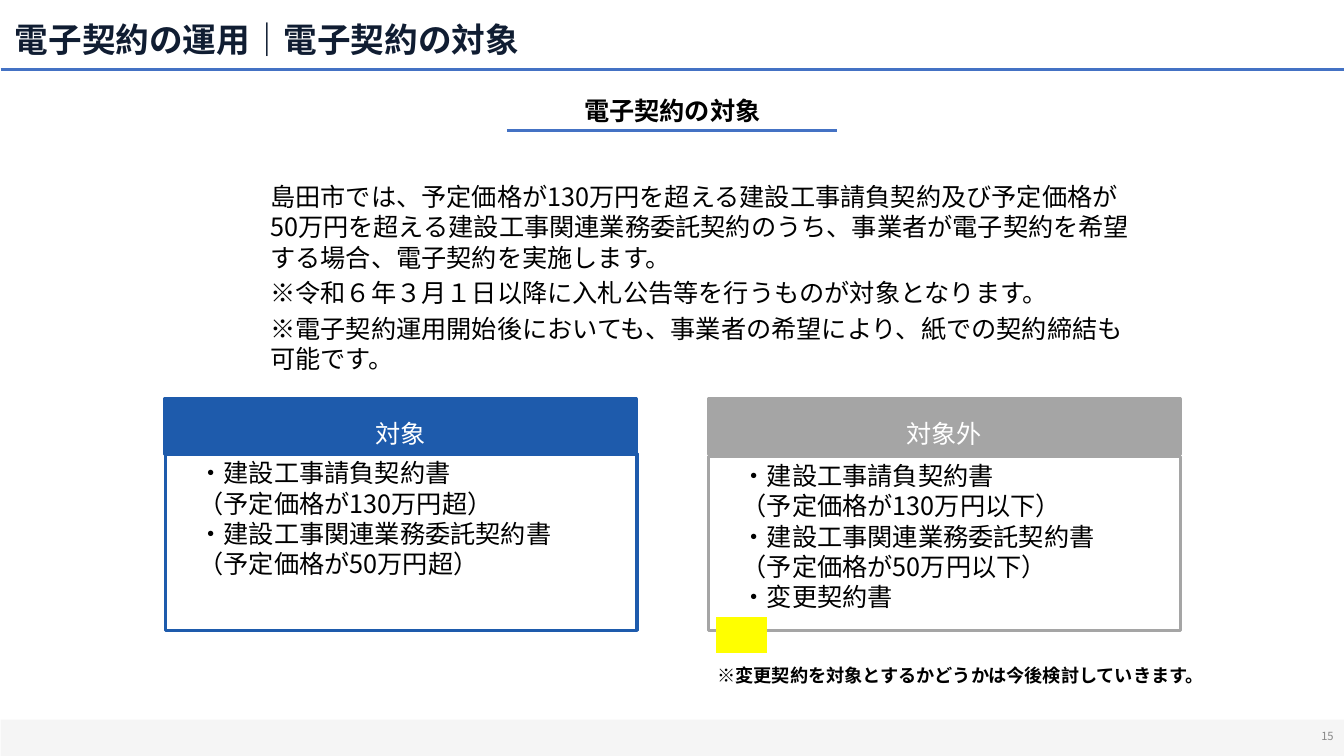
import pptx
import pptx.util
import pptx.dml.color
import pptx.enum.shapes
import pptx.enum.text
import pptx.oxml.ns
import lxml.etree
from dataclasses import dataclass

Pt = pptx.util.Pt
ALIGN = pptx.enum.text.PP_ALIGN
ANCHOR = pptx.enum.text.MSO_ANCHOR
RECTANGLE = pptx.enum.shapes.MSO_SHAPE.RECTANGLE
qn = pptx.oxml.ns.qn

# Content
TITLE = "電子契約の運用｜電子契約の対象"
SUBTITLE = "電子契約の対象"
PAGE_NUMBER = "15"
OVERVIEW = [
    "島田市では、予定価格が130万円を超える建設工事請負契約及び予定価格が50万円を超える"
    "建設工事関連業務委託契約のうち、事業者が電子契約を希望する場合、電子契約を実施します。",
    "※令和６年３月１日以降に入札公告等を行うものが対象となります。",
    "※電子契約運用開始後においても、事業者の希望により、紙での契約締結も可能です。",
]
NOTE = "※変更契約を対象とするかどうかは今後検討していきます。"


@dataclass(frozen=True)
class Theme:
    font: str = "Noto Sans CJK JP"
    title_color: str = "101D32"
    text: str = "000000"
    white: str = "FFFFFF"
    rule: str = "4472C4"
    included: str = "1E5BAC"
    excluded: str = "A5A5A5"
    footer: str = "F5F5F5"
    page: str = "888888"
    highlight: str = "FFFF00"
    title_size: float = 24
    body_size: float = 18
    note_size: float = 13
    page_size: float = 8
    line_width: float = 2.25


THEME = Theme()

# Heading, colour, header left, panel left, panel top, lines
CARDS = [
    ("対象", THEME.included, 117.4, 118, 324, [
        "・建設工事請負契約書", "（予定価格が130万円超）",
        "・建設工事関連業務委託契約書", "（予定価格が50万円超）"]),
    ("対象外", THEME.excluded, 506, 506, 326, [
        "・建設工事請負契約書", "（予定価格が130万円以下）",
        "・建設工事関連業務委託契約書", "（予定価格が50万円以下）",
        "・変更契約書"]),
]
CARD_WIDTH, HEADER_TOP, HEADER_HEIGHT, CARD_BOTTOM = 337, 285, 39.6, 450.3


def rgb(value):
    return pptx.dml.color.RGBColor.from_string(value)


def write(shape, lines, size, color, bold=False, align=ALIGN.LEFT, anchor=ANCHOR.MIDDLE,
          spacing=1.0, before=0, indent=0, insets=(7.2, 3.6)):
    frame = shape.text_frame
    frame.word_wrap = True
    frame.auto_size = pptx.enum.text.MSO_AUTO_SIZE.NONE
    frame.vertical_anchor = anchor
    frame.margin_left = frame.margin_right = Pt(insets[0])
    frame.margin_top = frame.margin_bottom = Pt(insets[1])
    for index, line in enumerate(lines):
        paragraph = frame.add_paragraph() if index else frame.paragraphs[0]
        properties = paragraph._p.get_or_add_pPr()
        properties.set("marL", str(Pt(indent)))
        properties.set("indent", "0")
        lxml.etree.SubElement(properties, qn("a:buNone"))
        paragraph.alignment = align
        paragraph.line_spacing = spacing
        paragraph.space_before = Pt(before if index else 0)
        run = paragraph.add_run()
        run.text = line
        run.font.size = Pt(size)
        run.font.bold = bold
        run.font.name = THEME.font
        run.font.color.rgb = rgb(color)
        east_asian = lxml.etree.SubElement(run._r.get_or_add_rPr(), qn("a:ea"))
        east_asian.set("typeface", THEME.font)


def place(shape, left, top, width, height):
    shape.left, shape.top, shape.width, shape.height = map(Pt, (left, top, width, height))
    return shape


def add_text(slide, box, lines, size, color, **options):
    write(slide.shapes.add_textbox(*map(Pt, box)), lines, size, color, **options)


def add_box(slide, box, fill=None, line=None):
    shape = slide.shapes.add_shape(RECTANGLE, *map(Pt, box))
    shape.shadow.inherit = False
    if fill:
        shape.fill.solid()
        shape.fill.fore_color.rgb = rgb(fill)
    else:
        shape.fill.background()
    if line:
        shape.line.color.rgb = rgb(line)
        shape.line.width = Pt(THEME.line_width)
    else:
        shape.line.fill.background()
    return shape


def add_rule(slide, left, right, y):
    rule = slide.shapes.add_connector(
        pptx.enum.shapes.MSO_CONNECTOR.STRAIGHT, Pt(left), Pt(y), Pt(right), Pt(y))
    rule.line.color.rgb = rgb(THEME.rule)
    rule.line.width = Pt(THEME.line_width)
    lxml.etree.SubElement(rule._element.spPr, qn("a:effectLst"))


def main():
    presentation = pptx.Presentation()
    presentation.slide_width, presentation.slide_height = Pt(960), Pt(540)
    slide = presentation.slides.add_slide(presentation.slide_layouts[1])

    # Title bar and footer
    write(place(slide.shapes.title, 3.5, 12.2, 828, 34.6), [TITLE],
          THEME.title_size, THEME.title_color, bold=True, spacing=0.9)
    add_rule(slide, 0.5, 960, 49.5)
    add_box(slide, (0.5, 514, 959.5, 26), fill=THEME.footer)
    add_text(slide, (743.8, 511.2, 216, 28.8), [PAGE_NUMBER],
             THEME.page_size, THEME.page, align=ALIGN.RIGHT)

    # Subtitle and overview
    add_text(slide, (276.5, 64, 407.5, 27.4), [SUBTITLE], THEME.body_size, THEME.text,
             bold=True, align=ALIGN.CENTER, spacing=1.1)
    add_rule(slide, 362, 597.6, 93)
    write(place(slide.placeholders[1], 185.8, 162.7, 639.4, 71.3), OVERVIEW,
          THEME.body_size, THEME.text, before=4)

    # Cards: panel, then its header on top
    for heading, color, header_left, panel_left, panel_top, lines in CARDS:
        panel = add_box(slide, (panel_left, panel_top, CARD_WIDTH, CARD_BOTTOM - panel_top),
                        line=color)
        write(panel, lines, THEME.body_size, THEME.text, anchor=ANCHOR.TOP,
              indent=THEME.body_size, insets=(5.8, 2.9))
        header = add_box(slide, (header_left, HEADER_TOP, CARD_WIDTH, HEADER_HEIGHT),
                         fill=color, line=color)
        write(header, [heading], THEME.body_size, THEME.white, align=ALIGN.CENTER,
              anchor=ANCHOR.TOP, spacing=1.5, insets=(5.8, 2.9))

    # Highlight mark and note
    add_box(slide, (511.5, 440.8, 36.3, 25.6), fill=THEME.highlight)
    add_text(slide, (505.4, 463, 356.4, 36.7), [NOTE], THEME.note_size, THEME.text,
             bold=True, spacing=1.1)

    presentation.save("out.pptx")


if __name__ == "__main__":
    main()
